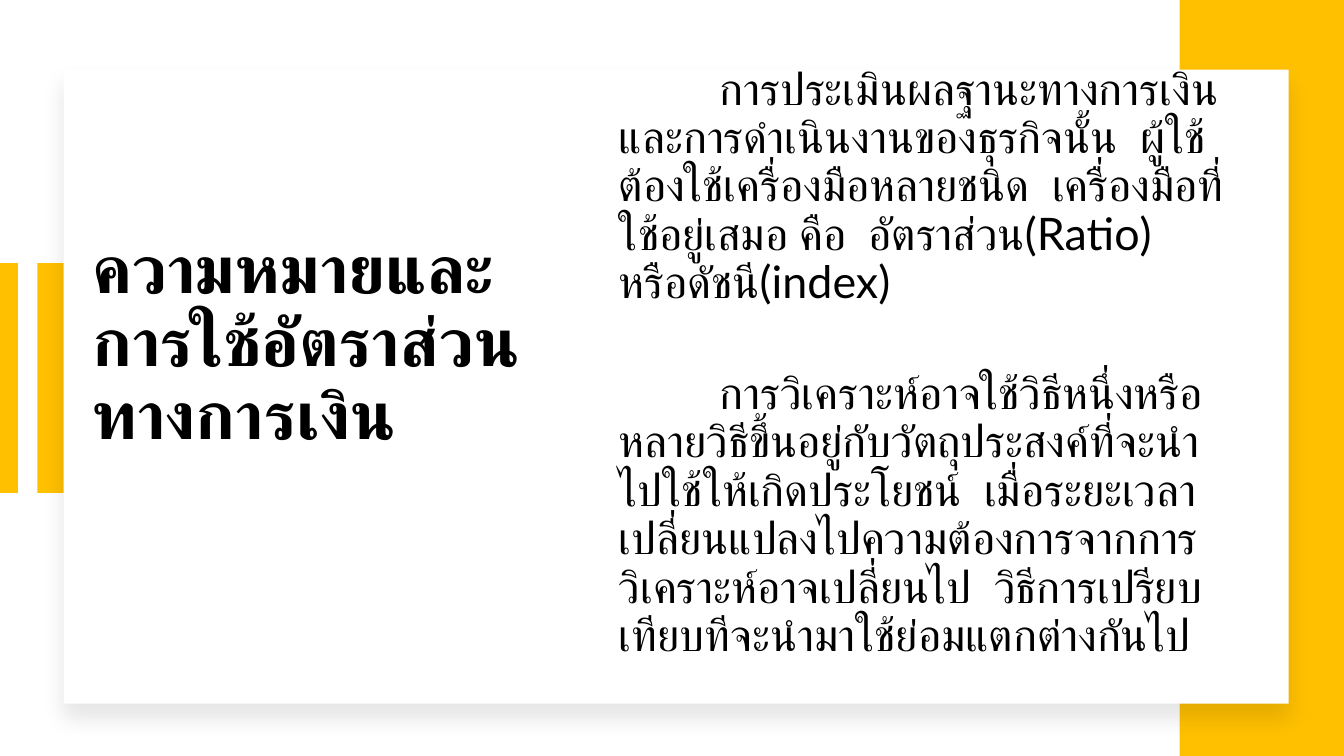
from pptx import Presentation
from pptx.dml.color import RGBColor
from pptx.enum.shapes import MSO_CONNECTOR as Connector, MSO_SHAPE as Shape
from pptx.enum.text import MSO_ANCHOR as Anchor, PP_ALIGN as Align
from pptx.oxml import parse_xml
from pptx.oxml.ns import nsdecls
from pptx.util import Inches, Pt

COLORS = {"gold": "FFC000", "white": "FFFFFF", "black": "000000"}

TITLE = "ความหมายและ\vการใช้อัตราส่วนทางการเงิน"
BODY = [
    "การประเมินผลฐานะทางการเงินและการดำเนินงานของธุรกิจนั้น  ผู้ใช้ต้องใช้เครื่องมือหลายชนิด  "
    "เครื่องมือที่ใช้อยู่เสมอ คือ  อัตราส่วน(Ratio)  หรือดัชนี(index)",
    "การวิเคราะห์อาจใช้วิธีหนึ่งหรือหลายวิธีขึ้นอยู่กับวัตถุประสงค์ที่จะนำไปใช้ให้เกิดประโยชน์  "
    "เมื่อระยะเวลาเปลี่ยนแปลงไปความต้องการจากการวิเคราะห์อาจเปลี่ยนไป  "
    "วิธีการเปรียบเทียบทีจะนำมาใช้ย่อมแตกต่างกันไป",
]


def apply(target, values):
    for name, value in values.items():
        setattr(target, name, value)


class SlideBuilder:
    font = "Lato"

    def __init__(self, slide):
        self.slide = slide

    def color(self, name):
        return RGBColor.from_string(COLORS[name])

    def rectangle(self, box, fill):
        shape = self.slide.shapes.add_shape(Shape.RECTANGLE, *map(Inches, box))
        shape.shadow.inherit = False
        shape.fill.solid()
        shape.fill.fore_color.rgb = self.color(fill)
        shape.line.fill.background()
        return shape

    def card(self, box, fill):
        shape = self.rectangle(box, fill)
        shape.shadow._element.effectLst.append(parse_xml(
            f'<a:outerShdw {nsdecls("a")} blurRad="{Pt(15)}" dist="{Pt(11)}" dir="5400000" '
            f'algn="t" rotWithShape="0"><a:srgbClr val="{COLORS["black"]}">'
            '<a:alpha val="10000"/></a:srgbClr></a:outerShdw>'))

    def line(self, start, end, color, width):
        connector = self.slide.shapes.add_connector(
            Connector.STRAIGHT, *map(Inches, start + end))
        connector.line.color.rgb = self.color(color)
        connector.line.width = Pt(width)
        connector._element.spPr.append(parse_xml(f'<a:effectLst {nsdecls("a")}/>'))

    def text(self, box, paragraphs, size, bold=False, gaps=(0,),
             left=0.0, first_line=0.0, bottom=0.05):
        frame = self.slide.shapes.add_textbox(*map(Inches, box)).text_frame
        apply(frame, {"word_wrap": True, "vertical_anchor": Anchor.MIDDLE,
                      "margin_bottom": Inches(bottom)})
        for index, (content, gap) in enumerate(zip(paragraphs, gaps)):
            paragraph = frame.add_paragraph() if index else frame.paragraphs[0]
            paragraph.text = content
            apply(paragraph, {"alignment": Align.LEFT, "line_spacing": 0.9,
                              "space_before": Pt(gap)})
            properties = paragraph._p.get_or_add_pPr()
            properties.set("marL", str(Inches(left)))
            properties.set("indent", str(Inches(first_line)))
            for run in paragraph.runs:
                apply(run.font, {"name": self.font, "size": Pt(size), "bold": bold})
                run.font.color.rgb = self.color("black")


def main():
    presentation = Presentation()
    apply(presentation, {"slide_width": Inches(13.33), "slide_height": Inches(7.5)})
    builder = SlideBuilder(presentation.slides.add_slide(presentation.slide_layouts[6]))

    # Gold accents
    builder.rectangle((0.37, 2.61, 0.34, 2.28), "gold")
    builder.line((0.08, 2.61), (0.08, 4.89), "gold", 14)
    builder.rectangle((11.7, 0, 1.63, 7.5), "gold")

    # White card
    builder.card((0.63, 0.69, 12.15, 6.29), "white")

    # Title and body
    builder.text((0.82, 0.86, 4.54, 5.12), [TITLE], 48, bold=True)
    builder.text((5.54, 0.94, 6.87, 5.78), BODY, 32, gaps=(5, 44.5),
                 left=0.5, first_line=1, bottom=0.49)

    presentation.save("out.pptx")


if __name__ == "__main__":
    main()
